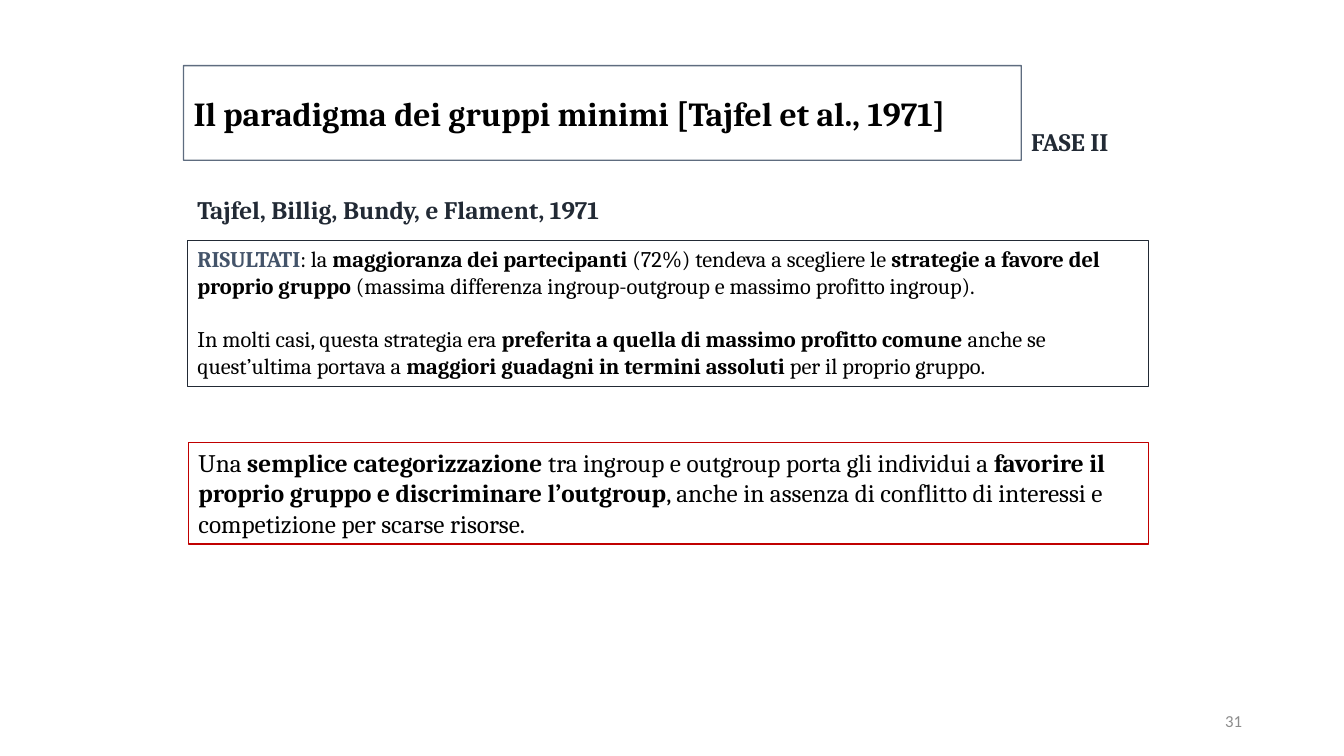
from dataclasses import dataclass
from typing import NamedTuple, Optional

from lxml.etree import SubElement
from pptx import Presentation
from pptx.dml.color import RGBColor
from pptx.enum.shapes import MSO_SHAPE
from pptx.enum.text import MSO_ANCHOR, MSO_AUTO_SIZE, PP_ALIGN
from pptx.oxml.ns import qn
from pptx.util import Inches, Pt

BLACK = RGBColor(0x00, 0x00, 0x00)
WHITE = RGBColor(0xFF, 0xFF, 0xFF)
SLATE = RGBColor(0x44, 0x54, 0x6A)
NAVY = RGBColor(0x22, 0x2A, 0x35)
RED = RGBColor(0xC0, 0x00, 0x00)
GREY = RGBColor(0x8C, 0x8C, 0x8C)

SLIDE_WIDTH, SLIDE_HEIGHT = Inches(13.33), Inches(7.5)
TITLE_ONLY_LAYOUT = 5


class Area(NamedTuple):
    """Left, top, width and height in percent of the slide's size."""
    left: float
    top: float
    width: float
    height: float


class Span(NamedTuple):
    text: str
    bold: bool = False
    color: Optional[RGBColor] = None


@dataclass(frozen=True)
class Panel:
    area: Area
    paragraphs: list[list[Span]]
    size: float
    line: RGBColor
    line_width: float
    fill: Optional[RGBColor] = None


TITLE_AREA = Area(13.65, 8.67, 62.34, 12.53)
PHASE_AREA = Area(TITLE_AREA.left + TITLE_AREA.width, 16, 8.25, 5.33)
AUTHORS_AREA = Area(13.95, 25.07, 72.32, 5.33)
NUMBER_AREA = Area(70.67, 92.67, 22.5, 5.33)

PANELS = [
    Panel(Area(13.95, 31.73, 71.49, 19.33), [
        [Span("RISULTATI", True, SLATE),
         Span(": la "),
         Span("maggioranza dei partecipanti ", True),
         Span("(72%) tendeva a scegliere le "),
         Span("strategie a favore del proprio gruppo ", True),
         Span("(massima differenza ingroup-outgroup e massimo profitto ingroup).")],
        [Span("In molti casi, questa strategia era "),
         Span("preferita a quella di massimo profitto comune ", True),
         Span("anche se quest’ultima portava a "),
         Span("maggiori guadagni in termini assoluti ", True),
         Span("per il proprio gruppo.")],
    ], size=16, line=NAVY, line_width=0.25),
    Panel(Area(14.03, 58.53, 71.42, 13.47), [
        [Span("Una "),
         Span("semplice categorizzazione ", True),
         Span("tra ingroup e outgroup porta gli individui a "),
         Span("favorire il proprio gruppo e discriminare l’outgroup", True),
         Span(", anche in assenza di conflitto di interessi e competizione per scarse risorse.")],
    ], size=18, line=RED, line_width=1.25, fill=WHITE),
]


def to_lengths(area: Area) -> tuple[int, int, int, int]:
    return (int(SLIDE_WIDTH * area.left / 100), int(SLIDE_HEIGHT * area.top / 100),
            int(SLIDE_WIDTH * area.width / 100), int(SLIDE_HEIGHT * area.height / 100))


def write_paragraphs(box, paragraphs: list[list[Span]], *, size: float,
                     font: str = "Cambria", color: RGBColor = BLACK,
                     align: PP_ALIGN = PP_ALIGN.LEFT,
                     anchor: MSO_ANCHOR = MSO_ANCHOR.TOP, gap: float = 19) -> None:
    """Fill a shape with styled spans, gap points apart between paragraphs."""
    frame = box.text_frame
    frame.word_wrap = True
    frame.auto_size = MSO_AUTO_SIZE.NONE
    frame.vertical_anchor = anchor
    for index, spans in enumerate(paragraphs):
        para = frame.add_paragraph() if index else frame.paragraphs[0]
        para.alignment = align
        para.space_before = Pt(gap if index else 0)
        for span in spans:
            run = para.add_run()
            run.text = span.text
            run.font.name = font
            run.font.size = Pt(size)
            run.font.bold = span.bold
            run.font.color.rgb = span.color or color


def add_label(page, area: Area, text: str, *, bold: bool = True, **text_format) -> None:
    box = page.shapes.add_textbox(*to_lengths(area))
    write_paragraphs(box, [[Span(text, bold)]], **text_format)


def add_panel(page, panel: Panel) -> None:
    box = page.shapes.add_shape(MSO_SHAPE.RECTANGLE, *to_lengths(panel.area))
    box.shadow.inherit = False
    if panel.fill is None:
        box.fill.background()
    else:
        box.fill.solid()
        box.fill.fore_color.rgb = panel.fill
    box.line.color.rgb = panel.line
    box.line.width = Pt(panel.line_width)
    write_paragraphs(box, panel.paragraphs, size=panel.size)


def place_title(page, text: str) -> None:
    title = page.shapes.title
    title.left, title.top, title.width, title.height = to_lengths(TITLE_AREA)
    title.line.color.rgb = SLATE
    title.line.width = Pt(1)
    line_color = title.line.fill._xPr.find(qn("a:solidFill"))[0]
    SubElement(line_color, qn("a:alpha")).set("val", "86000")
    write_paragraphs(title, [[Span(text, True)]], size=24, anchor=MSO_ANCHOR.MIDDLE)


def main() -> None:
    deck = Presentation()
    deck.slide_width, deck.slide_height = SLIDE_WIDTH, SLIDE_HEIGHT
    page = deck.slides.add_slide(deck.slide_layouts[TITLE_ONLY_LAYOUT])
    place_title(page, "Il paradigma dei gruppi minimi [Tajfel et al., 1971]")
    add_label(page, AUTHORS_AREA, "Tajfel, Billig, Bundy, e Flament, 1971", size=18, color=NAVY)
    for panel in PANELS:
        add_panel(page, panel)
    add_label(page, PHASE_AREA, "FASE II", size=18, color=NAVY)
    add_label(page, NUMBER_AREA, "31", bold=False, size=12, font="Calibri", color=GREY,
              align=PP_ALIGN.RIGHT, anchor=MSO_ANCHOR.MIDDLE)
    deck.save("out.pptx")


if __name__ == "__main__":
    main()
